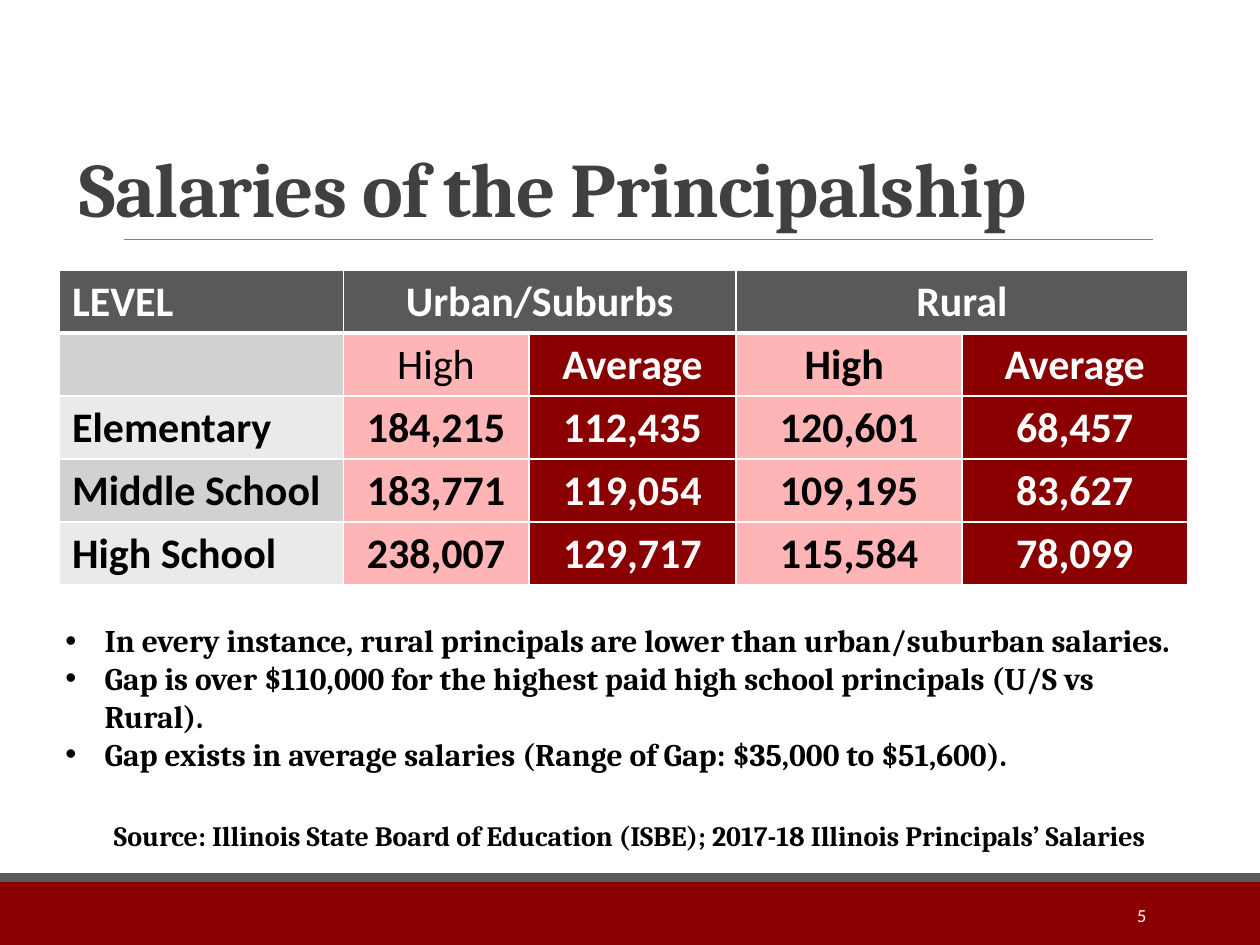
from dataclasses import dataclass

from lxml.etree import SubElement
from pptx import Presentation
from pptx.dml.color import RGBColor
from pptx.enum.shapes import MSO_CONNECTOR as Conn, MSO_SHAPE as Shape
from pptx.enum.text import MSO_ANCHOR as Anchor, PP_ALIGN as Align
from pptx.oxml import parse_xml
from pptx.oxml.ns import nsdecls, qn
from pptx.util import Cm, Pt


@dataclass(frozen=True)
class Theme:
    red: str = "8A0000"
    pink: str = "FFB5B5"
    gray: str = "595959"
    bands: tuple = ("D1D1D1", "EAEAEA")
    rule: str = "808080"
    heading: str = "404040"
    white: str = "FFFFFF"
    black: str = "000000"
    serif: str = "Cambria"
    sans: str = "Calibri"
    title_size: float = 44
    table_size: float = 24
    bullet_size: float = 18
    source_size: float = 16
    number_size: float = 10.5


T = Theme()
COLUMNS = (5.72, 3.74, 4.18, 4.55, 4.55)
ROWS = (
    ("LEVEL", "Urban/Suburbs", "", "Rural", ""),
    ("", "High", "Average", "High ", "Average"),
    ("Elementary", "184,215", "112,435", "120,601", "68,457"),
    ("Middle School", "183,771", "119,054", "109,195", "83,627"),
    ("High School", "238,007", "129,717", "115,584", "78,099"),
)
BULLETS = (
    "In every instance, rural principals are lower than urban/suburban salaries.",
    "Gap is over $110,000 for the highest paid high school principals (U/S vs Rural).",
    "Gap exists in average salaries (Range of Gap: $35,000 to $51,600).",
)


def rgb(value):
    return RGBColor.from_string(value)


def add_run(p, text, color, **fmt):
    r = p.add_run()
    r.text = text
    for name, value in fmt.items():
        setattr(r.font, name, value)
    r.font.color.rgb = rgb(color)
    return r


def add_text_frame(slide, box, anchor=Anchor.TOP):
    tf = slide.shapes.add_textbox(*map(Cm, box)).text_frame
    tf.word_wrap = True
    tf.vertical_anchor = anchor
    return tf


def add_rect(slide, box, color):
    sp = slide.shapes.add_shape(Shape.RECTANGLE, *map(Cm, box))
    sp.shadow.inherit = False
    sp.fill.solid()
    sp.fill.fore_color.rgb = rgb(color)
    sp.line.fill.background()


def add_footer(slide, box, number):
    x, y, w, h = box
    strip = 0.18
    add_rect(slide, (x, y + strip, w, h - strip), T.red)
    add_rect(slide, (x, y, w, strip), T.gray)
    tf = add_text_frame(slide, (x + 20.62, y + 0.33, 2.74, 1.02), Anchor.MIDDLE)
    p = tf.paragraphs[0]
    p.alignment = Align.RIGHT
    add_run(p, number, T.white, name=T.sans, size=Pt(T.number_size))


def add_title(slide, box, text):
    x, y, w, h = box
    base = y + h
    ln = slide.shapes.add_connector(
        Conn.STRAIGHT, Cm(x + 1.14), Cm(base), Cm(x + 21.89), Cm(base))
    ln.line.color.rgb = rgb(T.rule)
    ln.line.width = Pt(0.5)
    SubElement(ln._element.spPr, qn("a:effectLst"))
    p = add_text_frame(slide, box, Anchor.BOTTOM).paragraphs[0]
    p.line_spacing = 0.85
    r = add_run(p, text, T.heading, name=T.serif, size=Pt(T.title_size), bold=True)
    r.font._element.set("spc", "-50")


def set_borders(cell, bottom):
    tc_pr = cell._tc.get_or_add_tcPr()
    for i, (side, width) in enumerate(zip("LRTB", (1, 1, 1, bottom))):
        tc_pr.insert(i, parse_xml(
            f'<a:ln{side} {nsdecls("a")} w="{Pt(width)}"><a:solidFill>'
            f'<a:srgbClr val="{T.white}"/></a:solidFill></a:ln{side}>'))


def cell_colors(row, col):
    if row == 0:
        return T.gray, T.white
    if col == 0:
        return T.bands[(row - 1) % 2], T.black
    return (T.pink, T.black) if col % 2 else (T.red, T.white)


def add_salary_table(slide, box):
    shape = slide.shapes.add_table(len(ROWS), len(COLUMNS), *map(Cm, box))
    table = shape.table
    for column, width in zip(table.columns, COLUMNS):
        column.width = Cm(width)
    for i, texts in enumerate(ROWS):
        table.rows[i].height = Cm(box[3] / len(ROWS))
        for j, text in enumerate(texts):
            cell = table.cell(i, j)
            fill, color = cell_colors(i, j)
            cell.fill.solid()
            cell.fill.fore_color.rgb = rgb(fill)
            set_borders(cell, 1 if i else 3)
            p = cell.text_frame.paragraphs[0]
            if j:
                p.alignment = Align.CENTER
            if text:
                add_run(p, text, color, name=T.sans, size=Pt(T.table_size),
                        bold=(i, j) != (1, 1))
    for j in (1, 3):
        table.cell(0, j).merge(table.cell(0, j + 1))


def add_bullets(slide, box):
    tf = add_text_frame(slide, box)
    for i, text in enumerate(BULLETS):
        p = tf.add_paragraph() if i else tf.paragraphs[0]
        p_pr = p._p.get_or_add_pPr()
        p_pr.set("marL", str(Cm(0.79)))
        p_pr.set("indent", str(Cm(-0.79)))
        SubElement(p_pr, qn("a:buFont"), typeface="Arial")
        SubElement(p_pr, qn("a:buChar"), char="•")
        add_run(p, text, T.black, name=T.serif, size=Pt(T.bullet_size), bold=True)


def add_source(slide, box, text):
    p = add_text_frame(slide, box).paragraphs[0]
    p.alignment = Align.CENTER
    add_run(p, text, T.black, name=T.serif, size=Pt(T.source_size), bold=True)


def main():
    prs = Presentation()
    prs.slide_width, prs.slide_height = Cm(25.4), Cm(19.05)
    slide = prs.slides.add_slide(prs.slide_layouts[6])
    add_footer(slide, (0, 17.6, 25.4, 1.45), "5")
    add_title(slide, (1.35, 0.79, 22.83, 4.04), "Salaries of the Principalship")
    add_source(slide, (0, 16.38, 25.4, 0.94),
               "Source: Illinois State Board of Education (ISBE); "
               "2017-18 Illinois Principals’ Salaries")
    add_salary_table(slide, (1.2, 5.44, sum(COLUMNS), 6.35))
    add_bullets(slide, (1.07, 12.4, 23.11, 4.11))
    prs.save("out.pptx")


if __name__ == "__main__":
    main()
